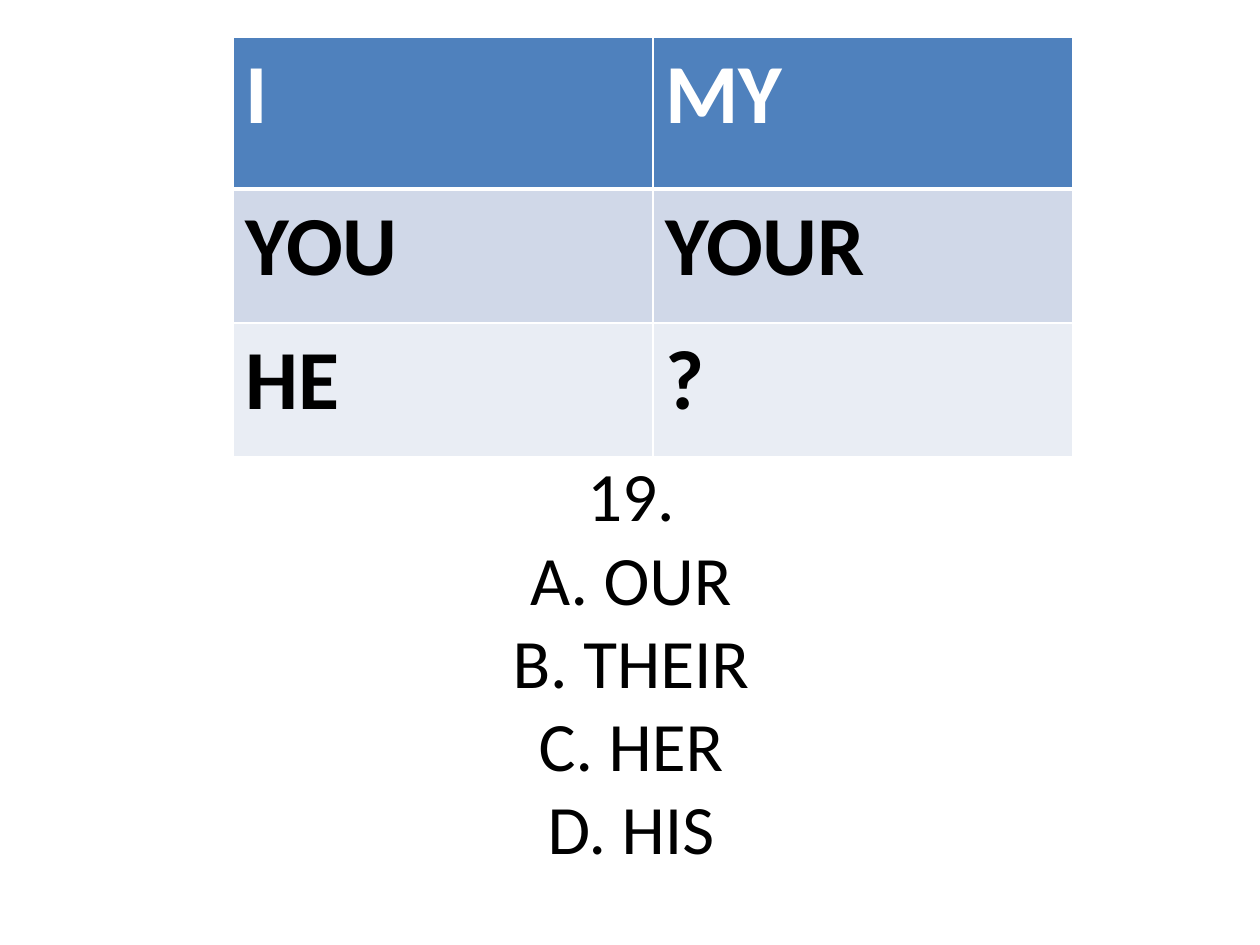
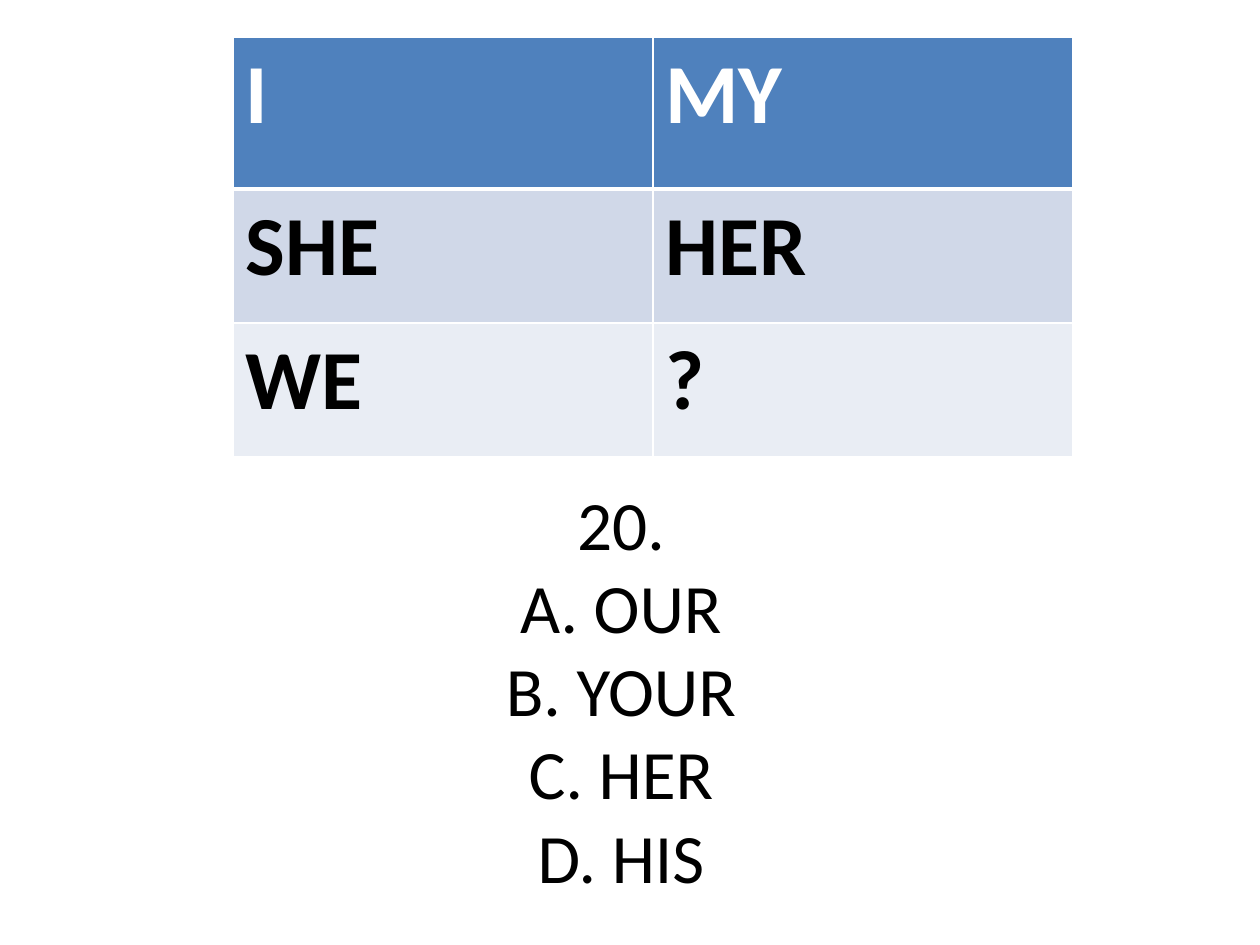
import pptx
import pptx.util
from lxml import etree
from pptx.dml.color import RGBColor
from pptx.enum.text import MSO_ANCHOR, PP_ALIGN
from pptx.oxml.ns import qn

PX = 914400 / 126
WHITE = RGBColor(0xFF, 0xFF, 0xFF)
BLACK = RGBColor(0, 0, 0)
HEADER = RGBColor(0x4F, 0x81, 0xBD)
BAND_DARK = RGBColor(0xD0, 0xD8, 0xE8)
BAND_LIGHT = RGBColor(0xE9, 0xED, 0xF4)
FONT = "Calibri"

ROW_HEIGHTS = [152, 134, 134]
ROW_FILLS = [HEADER, BAND_DARK, BAND_LIGHT]
COL_WIDTH = 420

# Each question: pronoun rows below the header, answer lines, answer box.
QUESTIONS = [
    ([("YOU", "YOUR"), ("HE", "?")],
     ["19.", "A. OUR", "B. THEIR", "C. HER", "D. HIS"], (64, 428, 1134, 465)),
    ([("SHE", "HER"), ("WE", "?")],
     ["20.", "A. OUR", "B. YOUR", "C. HER", "D. HIS"], (54, 452, 1134, 474)),
]


def px(*lengths):
    return [pptx.util.Emu(round(n * PX)) for n in lengths]


def write(tf, lines, size, color=BLACK, bold=False, align=PP_ALIGN.LEFT):
    """Fill a text frame with one paragraph per line."""
    for i, line in enumerate(lines):
        p = tf.paragraphs[0] if i == 0 else tf.add_paragraph()
        p.alignment = align
        r = p.add_run()
        r.text = line
        r.font.name = FONT
        r.font.size = pptx.util.Pt(size)
        r.font.bold = bold
        r.font.color.rgb = color


prs = pptx.Presentation()
prs.slide_width, prs.slide_height = px(1260, 945)

for pronouns, answers, box in QUESTIONS:
    s = prs.slides.add_slide(prs.slide_layouts[6])

    sp = s.shapes.add_textbox(*px(*box))
    tf = sp.text_frame
    tf.word_wrap = True
    tf.vertical_anchor = MSO_ANCHOR.MIDDLE
    write(tf, answers, 39.6, align=PP_ALIGN.CENTER)

    rows = [("I", "MY")] + pronouns
    table = s.shapes.add_table(
        len(rows), 2, *px(233, 37, 2 * COL_WIDTH, sum(ROW_HEIGHTS))).table
    for column in table.columns:
        column.width = px(COL_WIDTH)[0]
    for i, words in enumerate(rows):
        table.rows[i].height = px(ROW_HEIGHTS[i])[0]
        borders = {"a:lnL": 1, "a:lnR": 1,
                   "a:lnT": 3 if i == 1 else 1, "a:lnB": 3 if i == 0 else 1}
        for j, word in enumerate(words):
            cell = table.cell(i, j)
            tcPr = cell._tc.get_or_add_tcPr()
            for tag, width in borders.items():
                ln = etree.SubElement(tcPr, qn(tag), w=str(pptx.util.Pt(width)))
                fill = etree.SubElement(ln, qn("a:solidFill"))
                etree.SubElement(fill, qn("a:srgbClr"), val=str(WHITE))
            cell.fill.solid()
            cell.fill.fore_color.rgb = ROW_FILLS[i]
            write(cell.text_frame, [word], 48, bold=True,
                  color=WHITE if i == 0 else BLACK)

prs.save("out.pptx")
